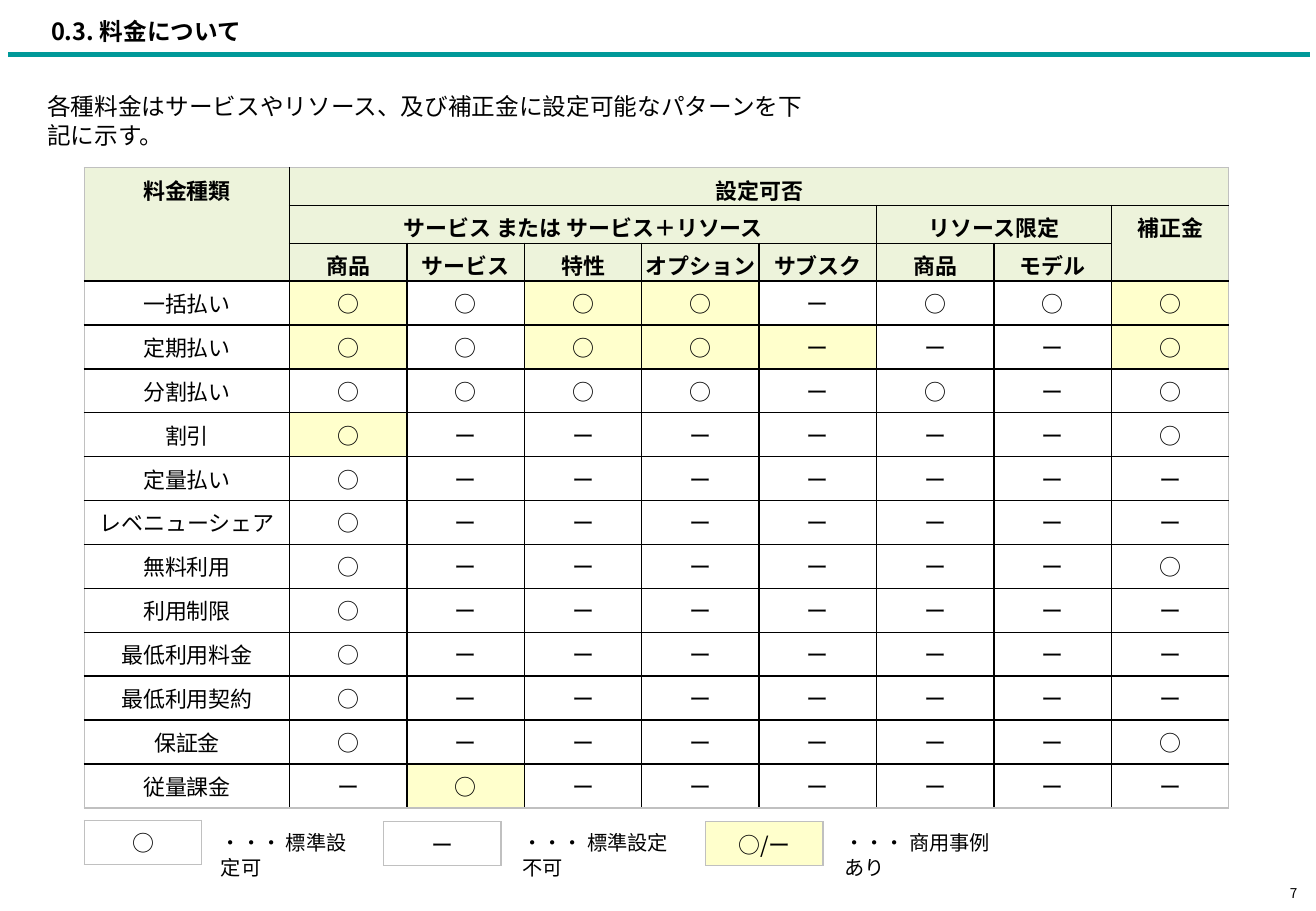
from dataclasses import dataclass

from lxml import etree
from pptx import Presentation
from pptx.dml.color import RGBColor as Color
from pptx.enum.shapes import MSO_CONNECTOR as Connector
from pptx.enum.text import MSO_ANCHOR as Anchor, PP_ALIGN as Align
from pptx.oxml import parse_xml
from pptx.oxml.ns import nsdecls, qn
from pptx.util import Pt


@dataclass(frozen=True)
class Theme:
    font: str = "Noto Sans CJK JP"
    text: str = "000000"
    accent: str = "009999"
    header: str = "EDF3DB"
    used: str = "FFFFCC"
    plain: str = "FFFFFF"
    grid: str = "000000"
    frame: str = "C0C0C0"
    title_size: float = 14
    table_size: float = 13
    legend_size: float = 12
    number_size: float = 8


theme = Theme()


def write(frame, text, size, bold=False, align=Align.LEFT):
    frame.text = text
    para = frame.paragraphs[0]
    para.alignment = align
    span = para.runs[0]
    span.font.name = theme.font
    span.font.size = Pt(size)
    span.font.bold = bold
    span.font.color.rgb = Color.from_string(theme.text)
    east_asian = etree.SubElement(span.font._element, qn("a:ea"))
    east_asian.set("typeface", theme.font)


def fill_table(table, texts, fills, header_rows=0):
    table.first_row = table.horz_banding = False
    style = table._tbl.tblPr.find(qn("a:tableStyleId"))
    style.text = "{2D5ABB26-0587-4C30-8999-92F81FD0307C}"
    last_row, last_column = len(table.rows), len(table.columns)
    for row, line in enumerate(texts):
        for column, text in enumerate(line):
            cell = table.cell(row, column)
            if cell.is_spanned:
                continue
            is_header = row < header_rows
            cell.margin_left = cell.margin_right = Pt(1.44)
            cell.margin_top = Pt(3.6)
            cell.margin_bottom = Pt(0 if is_header else 3.6)
            write(cell.text_frame, text, theme.table_size, is_header, Align.CENTER)
            outer = {
                "L": column == 0,
                "R": column + cell.span_width == last_column,
                "T": row == 0,
                "B": row + cell.span_height == last_row,
            }
            for side, is_outer in outer.items():
                color = theme.frame if is_outer else theme.grid
                cell._tc.get_or_add_tcPr().append(parse_xml(
                    f'<a:ln{side} {nsdecls("a")} w="12700"><a:solidFill>'
                    f'<a:srgbClr val="{color}"/></a:solidFill></a:ln{side}>'
                ))
            cell.fill.solid()
            cell.fill.fore_color.rgb = Color.from_string(fills[row][column])


deck = Presentation()
deck.slide_width, deck.slide_height = Pt(780), Pt(540)
page = deck.slides.add_slide(deck.slide_layouts[5])

rule = page.shapes.add_connector(Connector.STRAIGHT, Pt(5), Pt(32.4), Pt(776.2), Pt(32.4))
rule.line.color.rgb = Color.from_string(theme.accent)
rule.line.width = Pt(3)
etree.SubElement(rule._element.spPr, qn("a:effectLst"))

title = page.shapes.title
title.left, title.top, title.width, title.height = Pt(24.5), Pt(5), Pt(731), Pt(26.6)
frame = title.text_frame
frame.margin_left = Pt(5.76)
frame.margin_right = frame.margin_top = frame.margin_bottom = Pt(2.88)
frame.vertical_anchor = Anchor.MIDDLE
write(frame, "0.3. 料金について", theme.title_size, True)

lead = "各種料金はサービスやリソース、及び補正金に設定可能なパターンを下記に示す。"
labels = [
    (lead, 20.9, 51.1, 466.6, 24.5, theme.title_size),
    ("・・・ 標準設定可", 123.8, 488.9, 97.2, 21.6, theme.legend_size),
    ("・・・ 標準設定不可", 302.4, 488.9, 109.4, 21.6, theme.legend_size),
    ("・・・ 商用事例あり", 493.2, 488.9, 103, 21.6, theme.legend_size),
]
for text, left, top, width, height, size in labels:
    box = page.shapes.add_textbox(Pt(left), Pt(top), Pt(width), Pt(height))
    box.text_frame.word_wrap = True
    write(box.text_frame, text, size)

number = page.shapes.add_textbox(Pt(749.5), Pt(522), Pt(26.6), Pt(14.4))
number.text_frame.vertical_anchor = Anchor.MIDDLE
write(number.text_frame, "7", theme.number_size, align=Align.RIGHT)

headers = [
    ["料金種類", "設定可否"] + [""] * 7,
    ["", "サービス または サービス＋リソース", "", "", "", "", "リソース限定", "", "補正金"],
    ["", "商品", "サービス", "特性", "オプション", "サブスク", "商品", "モデル", ""],
]
charges = [
    ("一括払い", "○○○○ー○○○", (1, 3, 4, 8)),
    ("定期払い", "○○○○ーーー○", (1, 3, 4, 5, 8)),
    ("分割払い", "○○○○ー○ー○", ()),
    ("割引", "○ーーーーーー○", (1,)),
    ("定量払い", "○ーーーーーーー", ()),
    ("レベニューシェア", "○ーーーーーーー", ()),
    ("無料利用", "○ーーーーーー○", ()),
    ("利用制限", "○ーーーーーーー", ()),
    ("最低利用料金", "○ーーーーーーー", ()),
    ("最低利用契約", "○ーーーーーーー", ()),
    ("保証金", "○ーーーーーー○", ()),
    ("従量課金", "ー○ーーーーーー", (2,)),
]
texts = headers + [[name, *marks] for name, marks, used in charges]
fills = [[theme.header] * 9 for line in headers]
for name, marks, used in charges:
    fills.append([theme.used if column in used else theme.plain for column in range(9)])

pricing = page.shapes.add_table(15, 9, Pt(50), Pt(99.4), Pt(678.4), Pt(379.7)).table
for index, column in enumerate(pricing.columns):
    column.width = Pt(69.6 if index else 121.6)
for index, row in enumerate(pricing.rows):
    row.height = Pt(22.4 if index < len(headers) else 26.04)
for top, left, bottom, right in [
    (0, 0, 2, 0), (0, 1, 0, 8), (1, 1, 1, 5), (1, 6, 1, 7), (1, 8, 2, 8),
]:
    pricing.cell(top, left).merge(pricing.cell(bottom, right))
fill_table(pricing, texts, fills, len(headers))

legend = [
    ("○", 50, 486.4, theme.plain),
    ("ー", 227.4, 487.1, theme.plain),
    ("○/ー", 418.3, 487.1, theme.used),
]
for mark, left, top, color in legend:
    key = page.shapes.add_table(1, 1, Pt(left), Pt(top), Pt(69.6), Pt(26.04)).table
    fill_table(key, [[mark]], [[color]])

deck.save("out.pptx")
